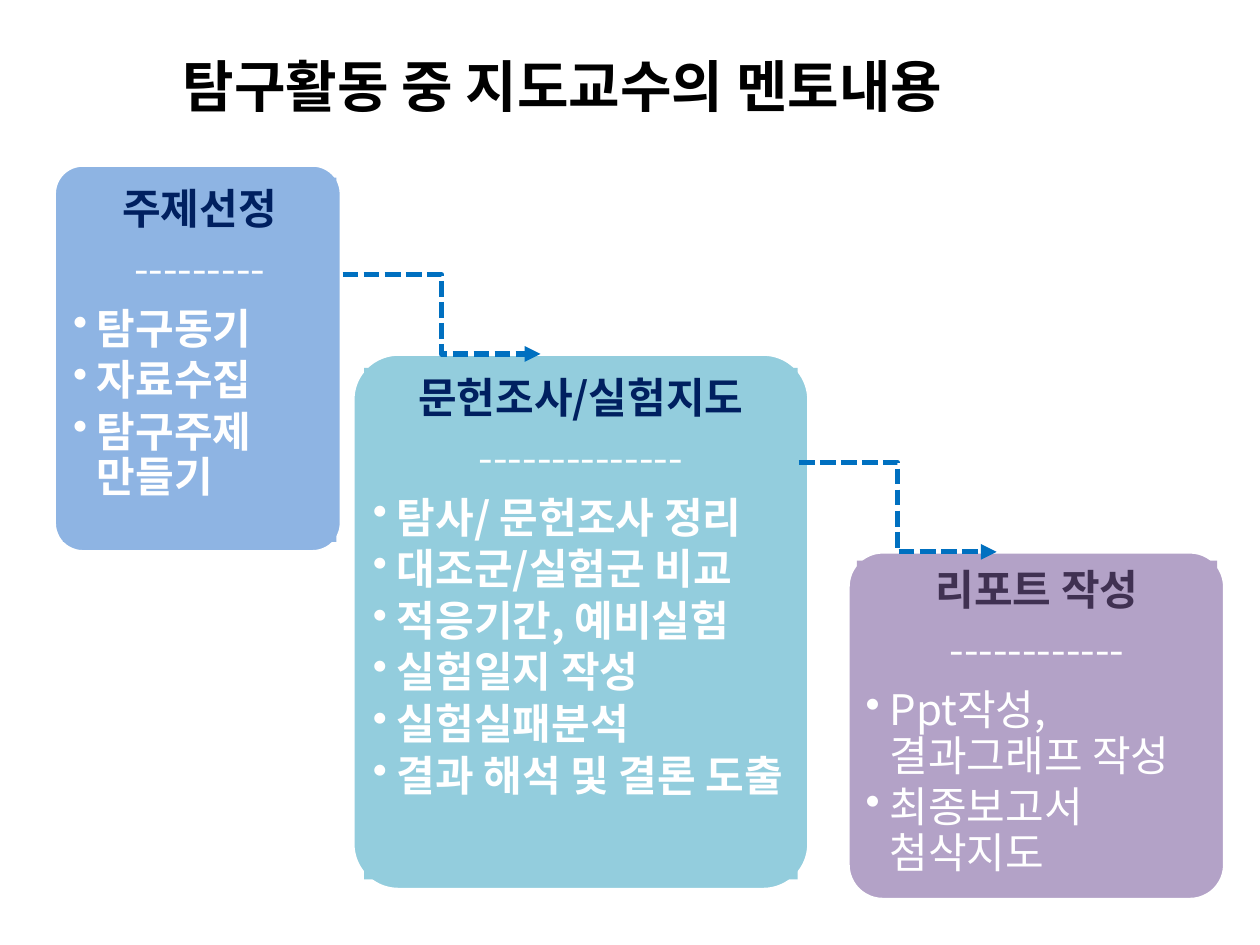
from pptx import Presentation
from pptx.dml.color import RGBColor
from pptx.enum.dml import MSO_LINE
from pptx.enum.shapes import MSO_CONNECTOR, MSO_SHAPE
from pptx.enum.text import MSO_ANCHOR, MSO_AUTO_SIZE, PP_ALIGN
from pptx.oxml.ns import qn
from pptx.util import Inches, Pt
from lxml.etree import SubElement

FONT = "Noto Sans CJK KR"
TITLE = "탐구활동 중 지도교수의 멘토내용"
STAGES = [
    dict(card=(0.43, 1.31, 2.28, 3.07), panel=(0.5, 1.41, 2.17, 2.89), inset=0.08,
         fill="8EB4E3", heading="주제선정", color="002060", dashes=9, bold=True,
         items=["탐구동기", "자료수집", "탐구주제 만들기"]),
    dict(card=(2.8, 2.81, 3.62, 4.25), panel=(2.89, 2.92, 3.44, 4.06), inset=0.07,
         fill="93CDDD", heading="문헌조사/실험지도", color="002060", dashes=14, bold=True,
         items=["탐사/ 문헌조사 정리", "대조군/실험군 비교", "적응기간, 예비실험",
                "실험일지 작성", "실험실패분석", "결과 해석 및 결론 도출"]),
    dict(card=(6.73, 4.38, 2.99, 2.76), panel=(6.8, 4.45, 2.86, 2.53), inset=0.07,
         fill="B3A2C7", heading="리포트 작성", color="403152", dashes=12, bold=False,
         items=["Ppt작성, 결과그래프 작성", "최종보고서 첨삭지도"]),
]
ARROWS = [(2.72, 2.18, 4.29, 2.81), (6.34, 3.67, 7.91, 4.38)]


def rgb(value):
    return RGBColor.from_string(value)


def add_run(p, text, size, color, bold):
    r = p.add_run()
    r.text = text
    r.font.size = Pt(size)
    r.font.bold = bold
    r.font.color.rgb = rgb(color)
    r.font.name = FONT
    SubElement(r.font._element, qn("a:ea"), typeface=FONT)


def set_frame(tf, inset):
    tf.word_wrap = True
    tf.auto_size = MSO_AUTO_SIZE.NONE
    tf.vertical_anchor = MSO_ANCHOR.TOP
    tf.margin_left = tf.margin_right = Inches(inset)
    tf.margin_top = tf.margin_bottom = Inches(inset)


def add_block(s, kind, box, fill):
    sp = s.shapes.add_shape(kind, *map(Inches, box))
    sp.shadow.inherit = False
    sp.fill.solid()
    sp.fill.fore_color.rgb = rgb(fill)
    sp.line.fill.background()
    return sp


def add_stage(s, stage):
    card = add_block(s, MSO_SHAPE.ROUNDED_RECTANGLE, stage["card"], stage["fill"])
    card.adjustments[0] = 0.1
    card.line.color.rgb = rgb("FFFFFF")
    card.line.width = Pt(2)
    tf = add_block(s, MSO_SHAPE.RECTANGLE, stage["panel"], stage["fill"]).text_frame
    set_frame(tf, stage["inset"])
    lines = [(stage["heading"], stage["color"], True, False),
             ("-" * stage["dashes"], "FFFFFF", False, False)]
    lines += [(item, "FFFFFF", stage["bold"], True) for item in stage["items"]]
    for i, (text, color, bold, bullet) in enumerate(lines):
        p = tf.add_paragraph() if i else tf.paragraphs[0]
        p.line_spacing = 0.9
        p.space_before = Pt(0)
        p.space_after = Pt(3.6 if bullet else 8.4)
        p.alignment = PP_ALIGN.LEFT if bullet else PP_ALIGN.CENTER
        if bullet:
            p.level = 1
            pPr = p._p.get_or_add_pPr()
            pPr.set("marL", str(Inches(0.19)))
            pPr.set("indent", str(-Inches(0.19)))
            SubElement(pPr, qn("a:buChar"), char="•")
        add_run(p, text, 24, color, bold)


def add_arrow(s, ends):
    line = s.shapes.add_connector(MSO_CONNECTOR.ELBOW, *map(Inches, ends))
    line.line.color.rgb = rgb("0070C0")
    line.line.width = Pt(3)
    line.line.dash_style = MSO_LINE.SQUARE_DOT
    SubElement(line.line._get_or_add_ln(), qn("a:tailEnd"), type="triangle")
    SubElement(line._element.spPr, qn("a:effectLst"))


def main():
    prs = Presentation()
    prs.slide_width, prs.slide_height = Inches(10), Inches(7.5)
    s = prs.slides.add_slide(prs.slide_layouts[5])
    title = s.shapes.title
    title.left, title.top, title.width, title.height = map(Inches, (1.35, 0.36, 8, 0.75))
    set_frame(title.text_frame, 0.05)
    title.text_frame.margin_left = Inches(0.1)
    p = title.text_frame.paragraphs[0]
    p.alignment = PP_ALIGN.LEFT
    add_run(p, TITLE, 32, "000000", True)
    for stage in STAGES:
        add_stage(s, stage)
    for ends in ARROWS:
        add_arrow(s, ends)
    prs.save("out.pptx")


if __name__ == "__main__":
    main()
